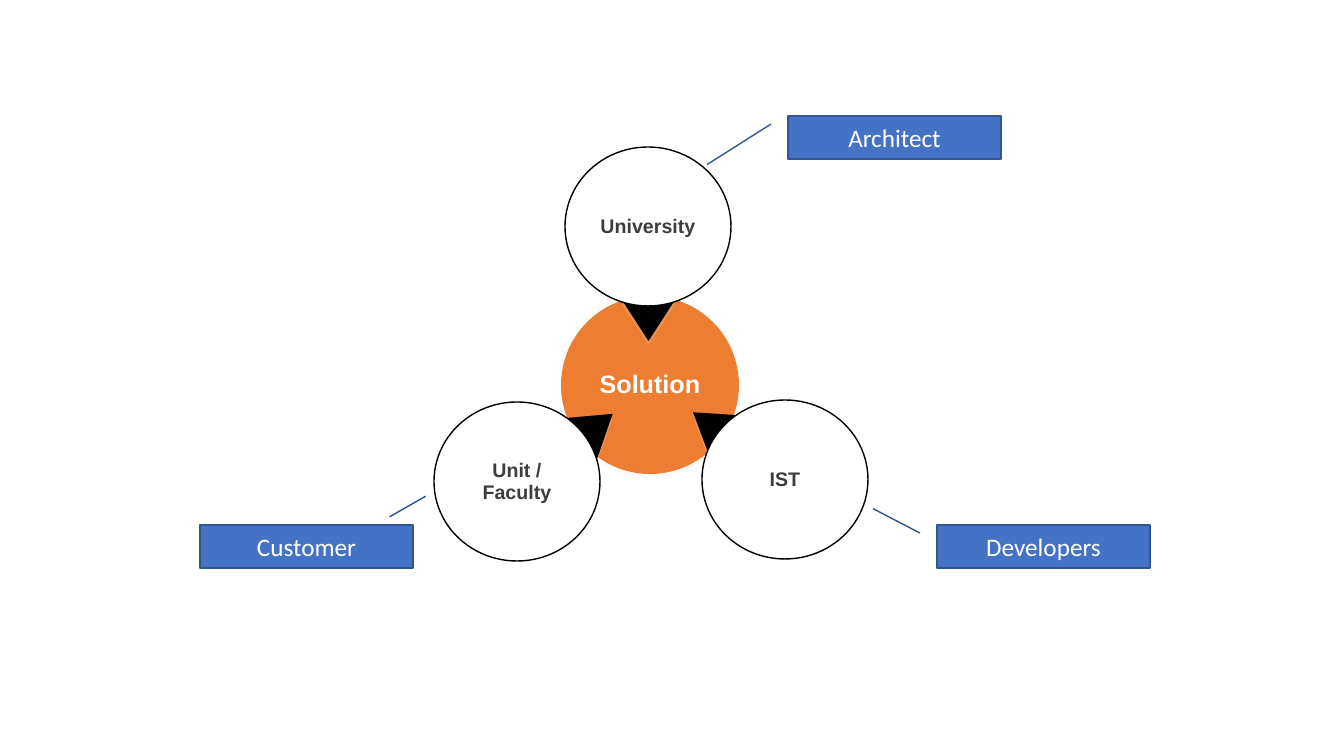
from dataclasses import dataclass
from lxml.etree import SubElement
from pptx import Presentation
from pptx.dml.color import RGBColor as RGB
from pptx.enum.shapes import MSO_SHAPE as Kind
from pptx.enum.text import MSO_ANCHOR as Anchor, PP_ALIGN as Align
from pptx.oxml.ns import qn
from pptx.util import Emu, Pt


@dataclass
class Theme:
    hub: str = "ED7D31"
    dark: str = "000000"
    light: str = "FFFFFF"
    ink: str = "3C3D3E"
    tag: str = "4472C4"
    edge: str = "325491"
    shade: str = "E7E6E6"
    head: str = "Arial"
    body: str = "Calibri"
    large: int = 18
    small: int = 14


theme = Theme()
SCALE = 914400 / 100.8


def draw(kind, box, fill, line=None, shade=False):
    shape = slide.shapes.add_shape(kind, *[Emu(round(n * SCALE)) for n in box])
    shape.fill.solid()
    shape.fill.fore_color.rgb = RGB.from_string(fill)
    if line:
        shape.line.color.rgb = RGB.from_string(line)
        shape.line.width = Pt(1)
    else:
        shape.line.fill.background()
    shape.shadow.inherit = False
    if shade:
        effects = shape._element.spPr.find(qn("a:effectLst"))
        cast = SubElement(effects, qn("a:outerShdw"), dist=str(Pt(3)),
                          dir="5400000", rotWithShape="0")
        tint = SubElement(cast, qn("a:srgbClr"), val=theme.shade)
        SubElement(tint, qn("a:alpha"), val="20000")
    return shape


def label(shape, text, size, face, color, bold=False):
    frame = shape.text_frame
    frame.word_wrap = True
    frame.vertical_anchor = Anchor.MIDDLE
    para = frame.paragraphs[0]
    para.text = text
    para.alignment = Align.CENTER
    if bold:
        para.line_spacing = 0.95
    para.font.size = Pt(size)
    para.font.name = face
    para.font.bold = bold
    para.font.color.rgb = RGB.from_string(color)


deck = Presentation()
deck.slide_width = Emu(round(1344 * SCALE))
deck.slide_height = Emu(round(756 * SCALE))
slide = deck.slides.add_slide(deck.slide_layouts[6])

hub = draw(Kind.OVAL, (561, 296, 178, 178), theme.hub, shade=True)
label(hub, "Solution", theme.large, theme.head, theme.light, True)

parties = [
    ("University", (565, 147), (622, 300), 180),
    ("Unit / Faculty", (434, 402), (570, 406), 52),
    ("IST", (702, 400), (683, 404), 306.6),
]
for name, spot, tip, turn in parties:
    arrow = draw(Kind.ISOSCELES_TRIANGLE, (*tip, 53, 41), theme.dark, shade=True)
    arrow.rotation = turn
    ring = draw(Kind.OVAL, (*spot, 166, 159), theme.light, theme.dark)
    label(ring, name, theme.small, theme.head, theme.ink, True)

roles = [
    ("Architect", (788, 116), (0.19, -0.08, 1.13, -0.38)),
    ("Developers", (937, 525), (0.19, -0.08, -0.38, -0.3)),
    ("Customer", (200, 525), (-0.19, 0.89, -0.67, 1.06)),
]
for name, spot, lead in roles:
    tag = draw(Kind.LINE_CALLOUT_1, (*spot, 213, 43), theme.tag, theme.edge)
    for i, value in enumerate(lead):
        tag.adjustments[i] = value
    label(tag, name, theme.large, theme.body, theme.light)

deck.save("out.pptx")
